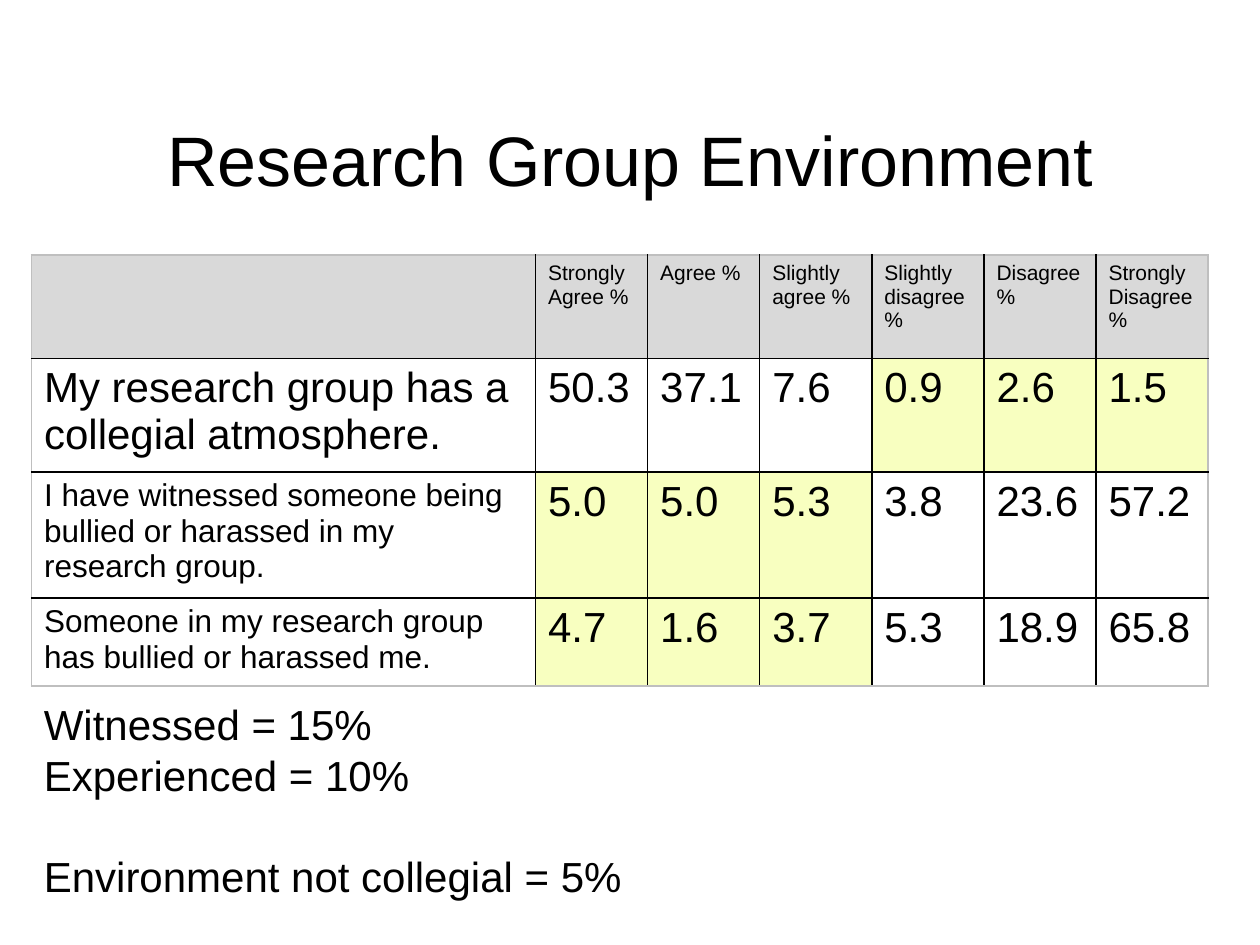
from lxml import etree
from pptx import Presentation
from pptx import util as u
from pptx.dml.color import RGBColor
from pptx.enum import text
from pptx.oxml.ns import qn

BLACK = RGBColor(0x00, 0x00, 0x00)
GREY = RGBColor(0xBF, 0xBF, 0xBF)
HEADER = RGBColor(0xD9, 0xD9, 0xD9)
HIGHLIGHT = RGBColor(0xF8, 0xFF, 0xC0)

HEADINGS = ["", "Strongly Agree %", "Agree %", "Slightly agree %",
            "Slightly disagree %", "Disagree %", "Strongly Disagree %"]
# Statement, its text size, values, highlighted columns
STATEMENTS = [
    ("My research group has a collegial atmosphere.", 24,
     ["50.3", "37.1", "7.6", "0.9", "2.6", "1.5"], range(4, 7)),
    ("I have witnessed someone being bullied or harassed in my research group.", 18,
     ["5.0", "5.0", "5.3", "3.8", "23.6", "57.2"], range(1, 4)),
    ("Someone in my research group has bullied or harassed me.", 18,
     ["4.7", "1.6", "3.7", "5.3", "18.9", "65.8"], range(1, 4)),
]
COLUMN_WIDTHS = [4] + [0.89] * 6
ROW_HEIGHTS = [0.82, 0.85, 0.94, 0.66]


class SlideBuilder:
    """Style and current slide; positions are shares of the slide's size."""

    font = "Arial"
    color = BLACK

    def __init__(self, presentation):
        self.width = presentation.slide_width
        self.height = presentation.slide_height
        self.slide = presentation.slides.add_slide(presentation.slide_layouts[6])

    def place(self, left, top, width, height):
        return (int(left * self.width), int(top * self.height),
                int(width * self.width), int(height * self.height))

    def format(self, paragraph, size, align=text.PP_ALIGN.LEFT):
        paragraph.alignment = align
        for run in paragraph.runs:
            run.font.name = self.font
            run.font.size = u.Pt(size)
            run.font.color.rgb = self.color

    def title(self, wording, box):
        shape = self.slide.shapes.add_textbox(*self.place(*box))
        frame = shape.text_frame
        frame.word_wrap = True
        frame.vertical_anchor = text.MSO_ANCHOR.MIDDLE
        frame.margin_bottom = u.Inches(0.24)
        frame.text = wording
        self.format(frame.paragraphs[0], 40, text.PP_ALIGN.CENTER)

    def notes(self, lines, box, size=24, leading=28.8):
        """Lines of text; the last one stands apart by one line."""
        shape = self.slide.shapes.add_textbox(*self.place(*box))
        frame = shape.text_frame
        frame.word_wrap = False
        frame.text = "\n".join(lines)
        for paragraph in frame.paragraphs:
            paragraph.line_spacing = u.Pt(leading)
            self.format(paragraph, size)
        frame.paragraphs[-1].space_before = u.Pt(leading)

    def table(self, widths, heights, left, top):
        box = self.place(left, top, 0, 0)[:2]
        shape = self.slide.shapes.add_table(
            len(heights), len(widths), *box,
            u.Inches(sum(widths)), u.Inches(sum(heights)))
        table = shape.table
        for column, width in zip(table.columns, widths):
            column.width = u.Inches(width)
        for row, height in zip(table.rows, heights):
            row.height = u.Inches(height)
        # Grey outside, black inside
        last_row, last_column = len(heights) - 1, len(widths) - 1
        for row in range(last_row + 1):
            for column in range(last_column + 1):
                self.borders(table.cell(row, column), {
                    "a:lnL": column == 0, "a:lnR": column == last_column,
                    "a:lnT": row == 0, "a:lnB": row == last_row})
        return table

    def borders(self, cell, outer_sides):
        properties = cell._tc.get_or_add_tcPr()
        for side, outer in outer_sides.items():
            line = etree.SubElement(properties, qn(side), w=str(u.Pt(1)))
            fill = etree.SubElement(line, qn("a:solidFill"))
            etree.SubElement(fill, qn("a:srgbClr"), val=str(GREY if outer else BLACK))

    def cell(self, cell, wording, size, fill=None):
        cell.text = wording
        self.format(cell.text_frame.paragraphs[0], size)
        if fill is None:
            cell.fill.background()
        else:
            cell.fill.solid()
            cell.fill.fore_color.rgb = fill


def main():
    presentation = Presentation()
    presentation.slide_width = u.Inches(10)
    presentation.slide_height = u.Inches(7.5)
    builder = SlideBuilder(presentation)

    builder.title("Research Group Environment", (0.05, 0.11, 0.9, 0.14))

    # Survey table
    table = builder.table(COLUMN_WIDTHS, ROW_HEIGHTS, 0.025, 0.27)
    for column, heading in enumerate(HEADINGS):
        builder.cell(table.cell(0, column), heading, 12, HEADER)
    for row, (statement, size, values, highlighted) in enumerate(STATEMENTS, 1):
        builder.cell(table.cell(row, 0), statement, size)
        for column, value in enumerate(values, 1):
            fill = HIGHLIGHT if column in highlighted else None
            builder.cell(table.cell(row, column), value, 24, fill)

    # Summary
    builder.notes(["Witnessed = 15%", "Experienced = 10%",
                   "Environment not collegial = 5%"], (0.025, 0.733, 0.484, 0.23))

    presentation.save("out.pptx")


if __name__ == "__main__":
    main()
